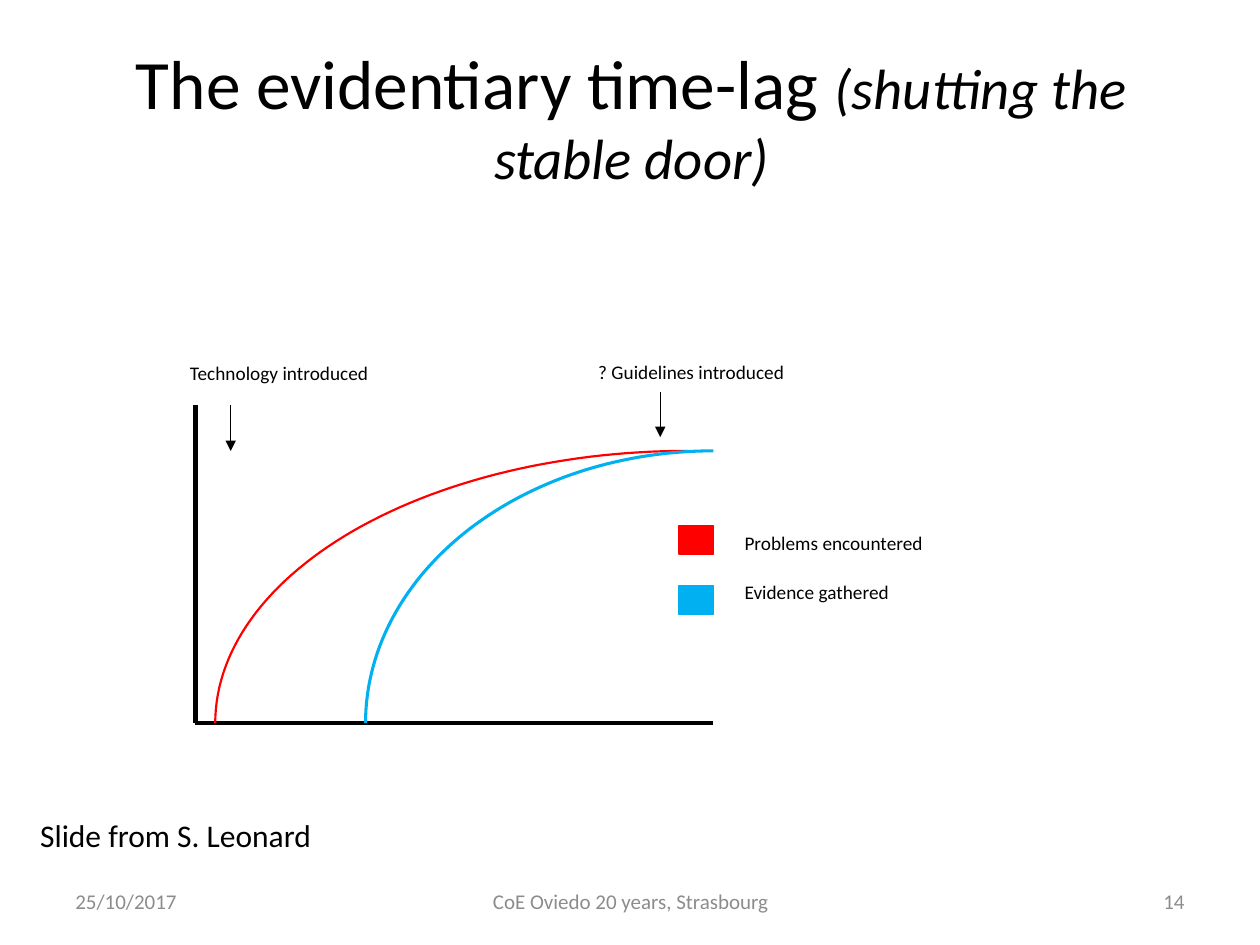
"""Build the evidentiary time-lag slide with its two rising curves."""
from math import cos, pi, sin

from lxml import etree
from pptx import Presentation
from pptx.dml.color import RGBColor
from pptx.enum.shapes import MSO_CONNECTOR, MSO_SHAPE
from pptx.enum.text import MSO_ANCHOR, PP_ALIGN
from pptx.oxml.ns import qn
from pptx.util import Cm, Pt

RECTANGLE = MSO_SHAPE.RECTANGLE
STRAIGHT = MSO_CONNECTOR.STRAIGHT
TOP, MIDDLE = MSO_ANCHOR.TOP, MSO_ANCHOR.MIDDLE
LEFT, CENTER, RIGHT = PP_ALIGN.LEFT, PP_ALIGN.CENTER, PP_ALIGN.RIGHT
BLACK, WHITE, GREY, RED, BLUE = "000000", "FFFFFF", "8C8C8C", "FF0000", "00B0F0"
CURVE_STEPS = 60
BASELINE, CURVE_TOP = 14.58, 9.09


def color(value):
    """Turn a hex string into a colour."""
    return RGBColor.from_string(value)


def write(box, spans, align=LEFT, anchor=TOP, wrap=True):
    """Fill a shape with one paragraph of formatted spans."""
    frame = box.text_frame
    frame.word_wrap = wrap
    frame.vertical_anchor = anchor
    para = frame.paragraphs[0]
    para.alignment = align
    for text, hue, formats in spans:
        span = para.add_run()
        span.text = text
        span.font.name = "Calibri"
        span.font.color.rgb = color(hue)
        for name, value in formats.items():
            setattr(span.font, name, value)


deck = Presentation()
deck.slide_width, deck.slide_height = Cm(25.4), Cm(19.05)
page = deck.slides.add_slide(deck.slide_layouts[6])
shapes = page.shapes

title = shapes.add_textbox(Cm(1.3), Cm(0.74), Cm(22.86), Cm(3.18))
title_spans = [
    ("The evidentiary time-lag ", BLACK, {"size": Pt(39.6)}),
    ("(shutting the stable door)", BLACK, {"size": Pt(32.4), "italic": True}),
]
write(title, title_spans, CENTER, MIDDLE)

axes = [
    (3.94, 8.15, 3.94, BASELINE, 2.5, False),
    (14.38, BASELINE, 3.94, BASELINE, 2.5, False),
]
arrows = [
    (4.34, 14.6, 4.34, 14.6, 0.75, True),
    (4.65, 8.15, 4.65, 9.09, 0.75, True),
    (13.31, 7.9, 13.31, 8.81, 0.75, True),
]
for x1, y1, x2, y2, width, has_head in axes + arrows:
    line = shapes.add_connector(STRAIGHT, Cm(x1), Cm(y1), Cm(x2), Cm(y2))
    line.line.color.rgb = color(BLACK)
    line.line.width = Pt(width)
    if has_head:
        outline = line.line._get_or_add_ln()
        etree.SubElement(outline, qn("a:tailEnd"), type="triangle")
    etree.SubElement(line._element.spPr, qn("a:effectLst"))

for start, end, hue, width in [(4.34, 13.87, RED, 1.25), (7.37, 14.38, BLUE, 1.75)]:
    angles = [step * pi / 2 / CURVE_STEPS for step in range(CURVE_STEPS + 1)]
    points = [
        (
            Cm(end - (end - start) * cos(angle)),
            Cm(BASELINE - (BASELINE - CURVE_TOP) * sin(angle)),
        )
        for angle in angles
    ]
    builder = shapes.build_freeform(*points[0])
    builder.add_line_segments(points[1:], close=False)
    curve = builder.convert_to_shape()
    curve.shadow.inherit = False
    curve.fill.background()
    curve.line.color.rgb = color(hue)
    curve.line.width = Pt(width)

panels = [
    (11.81, 7.14, 4.29, 0.76, WHITE, "? Guidelines introduced"),
    (3.58, 7.16, 4.34, 0.99, WHITE, "Technology introduced"),
    (13.69, 10.59, 0.69, 0.58, RED, ""),
    (13.69, 11.81, 0.69, 0.58, BLUE, ""),
    (14.76, 10.59, 4.32, 0.99, WHITE, "Problems encountered"),
    (14.76, 11.58, 4.32, 0.99, WHITE, "Evidence gathered"),
]
for left, top, width, height, hue, text in panels:
    panel = shapes.add_shape(RECTANGLE, Cm(left), Cm(top), Cm(width), Cm(height))
    panel.shadow.inherit = False
    panel.fill.solid()
    panel.fill.fore_color.rgb = color(hue)
    panel.line.color.rgb = color(hue)
    panel.line.width = Pt(0.75)
    if text:
        write(panel, [(text, BLACK, {"size": Pt(11)})])

footers = [
    (8.69, 8.05, "CoE Oviedo 20 years, Strasbourg", CENTER),
    (18.21, 5.92, "14", RIGHT),
    (1.27, 5.92, "25/10/2017", LEFT),
]
for left, width, text, align in footers:
    footer = shapes.add_textbox(Cm(left), Cm(17.65), Cm(width), Cm(1.02))
    write(footer, [(text, GREY, {"size": Pt(12)})], align, MIDDLE)

credit = shapes.add_textbox(Cm(0.56), Cm(16.33), Cm(6.05), Cm(1.8))
write(credit, [("Slide from S. Leonard", BLACK, {"size": Pt(18)})], wrap=False)

deck.save("out.pptx")
